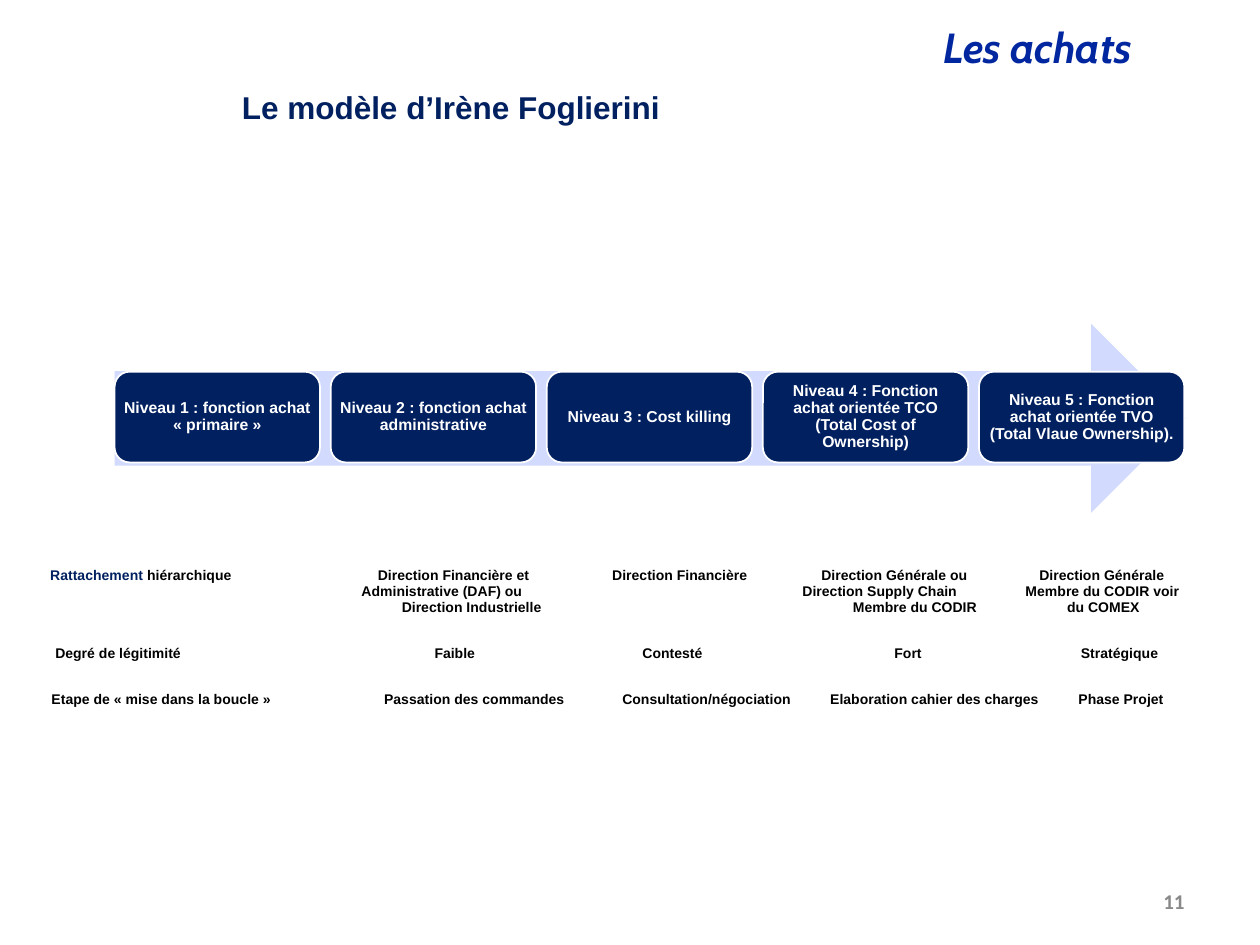
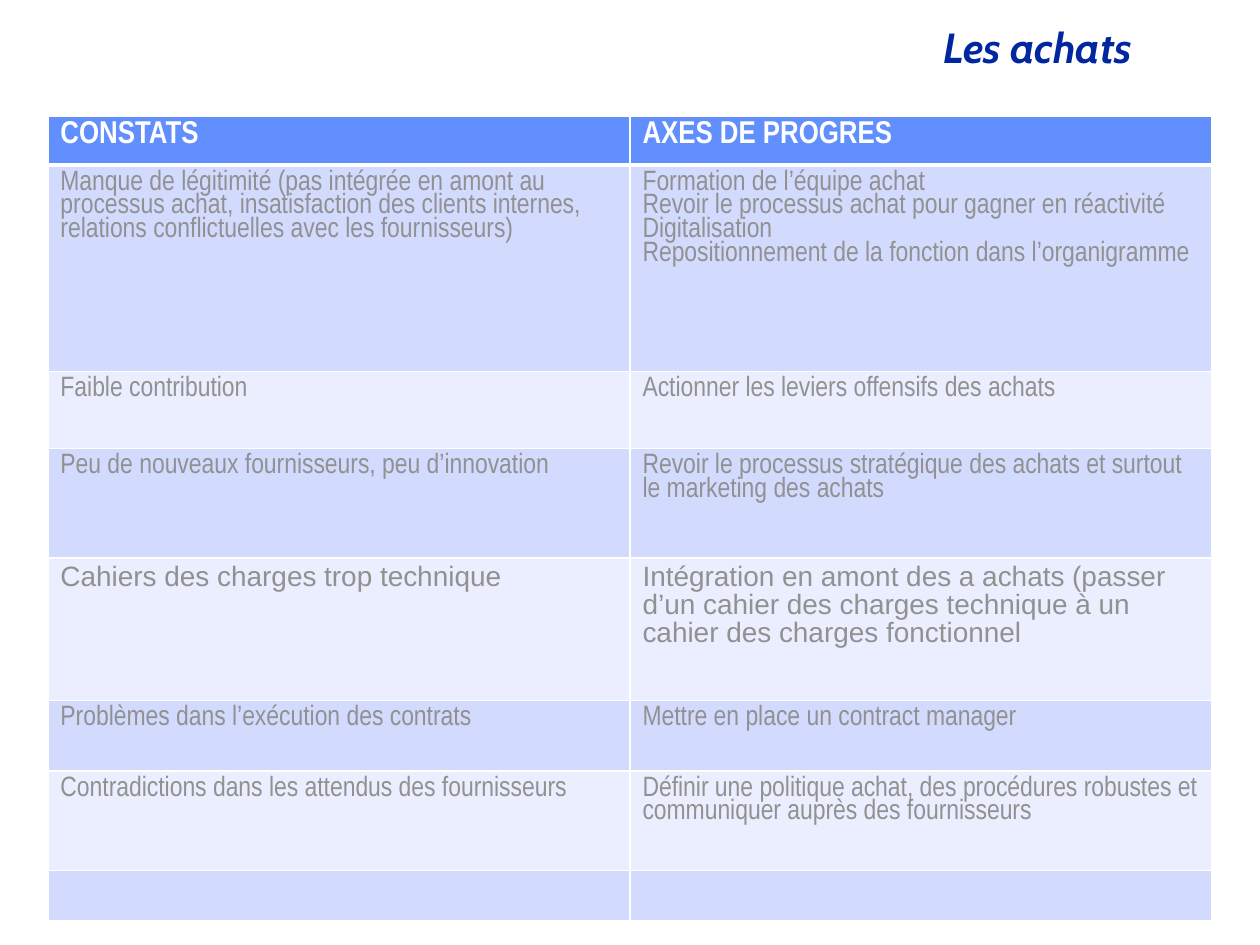
import pptx
import pptx.util
import pptx.dml.color
import pptx.enum.shapes
import pptx.enum.text
import pptx.oxml
import pptx.oxml.ns
from lxml import etree

Inches = pptx.util.Inches
Pt = pptx.util.Pt
ALIGN = pptx.enum.text.PP_ALIGN
ANCHOR = pptx.enum.text.MSO_ANCHOR
SHAPE = pptx.enum.shapes.MSO_SHAPE
qn = pptx.oxml.ns.qn

NAVY = "002060"
BRAND_BLUE = "00279F"
HEADER_BLUE = "618FFD"
PALE_BLUE = "D2DBFE"
PALEST_BLUE = "EAEEFF"
WHITE = "FFFFFF"
BLACK = "000000"
PAGE_GREY = "898989"
TEXT_GREY = "919191"


def colour(hex_value):
    return pptx.dml.color.RGBColor.from_string(hex_value)


def write(frame, lines, font_name, size, hex_value, align, bold=False, spacing=0.9):
    """Fill a text frame with one paragraph per line, all in one style."""
    frame.word_wrap = True
    for index, line in enumerate(lines):
        paragraph = frame.paragraphs[0] if index == 0 else frame.add_paragraph()
        paragraph.text = line
        paragraph.alignment = align
        paragraph.line_spacing = spacing
        paragraph.font.name = font_name
        paragraph.font.size = Pt(size)
        paragraph.font.bold = bold
        paragraph.font.color.rgb = colour(hex_value)


presentation = pptx.Presentation()
presentation.slide_width = Inches(10)
presentation.slide_height = Inches(7.5)
blank_layout = presentation.slide_layouts[6]

# Both slides carry the course title
model_slide = presentation.slides.add_slide(blank_layout)
findings_slide = presentation.slides.add_slide(blank_layout)
for slide in (model_slide, findings_slide):
    course_title = slide.shapes.add_textbox(Inches(1.33), Inches(0.17), Inches(7.75), Inches(0.46))
    write(course_title.text_frame, ["Les achats"], "Cabin", 24, BRAND_BLUE, ALIGN.RIGHT, bold=True)
    course_title.text_frame.paragraphs[0].font.italic = True

# Slide 1: heading and page number
heading = model_slide.shapes.add_textbox(Inches(0.27), Inches(0.68), Inches(6.62), Inches(0.37))
write(heading.text_frame, ["Le modèle d’Irène Foglierini"], "Arial", 18, NAVY, ALIGN.CENTER, bold=True)

page_number = model_slide.shapes.add_textbox(Inches(7.17), Inches(6.95), Inches(2.33), Inches(0.4))
write(page_number.text_frame, ["11"], "Calibri", 12, PAGE_GREY, ALIGN.RIGHT, bold=True, spacing=1.0)
page_number.text_frame.vertical_anchor = ANCHOR.MIDDLE

# Slide 1: arrow with the five levels
arrow = model_slide.shapes.add_shape(
    SHAPE.RIGHT_ARROW, Inches(0.91), Inches(2.57), Inches(8.5), Inches(1.5))
arrow.shadow.inherit = False
arrow.fill.solid()
arrow.fill.fore_color.rgb = colour(PALE_BLUE)
arrow.line.fill.background()

levels = [
    "Niveau 1 : fonction achat «\u00a0primaire\u00a0»",
    "Niveau 2 : fonction achat administrative",
    "Niveau 3 : Cost killing",
    "Niveau 4 : Fonction achat orientée TCO (Total Cost of Ownership)",
    "Niveau 5 : Fonction achat orientée TVO (Total Vlaue Ownership).",
]
level_pitch = (7.77 - 0.91) / 4
for index, level in enumerate(levels):
    box = model_slide.shapes.add_shape(
        SHAPE.ROUNDED_RECTANGLE, Inches(0.91 + index * level_pitch), Inches(2.95),
        Inches(1.63), Inches(0.72))
    box.shadow.inherit = False
    box.fill.solid()
    box.fill.fore_color.rgb = colour(NAVY)
    box.line.color.rgb = colour(WHITE)
    box.line.width = Pt(1)
    frame = box.text_frame
    frame.margin_left = frame.margin_right = Inches(0.04)
    frame.margin_top = frame.margin_bottom = Inches(0.04)
    frame.vertical_anchor = ANCHOR.MIDDLE
    write(frame, [level], "Arial", 9, WHITE, ALIGN.CENTER, bold=True)

# Slide 1: criteria under the levels, each entry on its own tab stop
# (distance from the slide's left edge, entry)
criteria_lines = [
    [(0.4, "Rattachement hiérarchique"), (3.0, "Direction Financière et"),
     (4.86, "Direction Financière"), (6.52, "Direction Générale ou"), (8.25, "Direction Générale")],
    [(2.87, "Administrative (DAF) ou"), (6.37, "Direction Supply Chain"),
     (8.14, "Membre du CODIR voir")],
    [(3.19, "Direction Industrielle"), (6.77, "Membre du CODIR"), (8.47, "du COMEX")],
    [(0.44, "Degré de légitimité"), (3.45, "Faible"), (5.1, "Contesté"),
     (7.1, "Fort"), (8.58, "Stratégique")],
    [(0.41, "Etape de «\u00a0mise dans la boucle\u00a0»"), (3.05, "Passation des commandes"),
     (4.94, "Consultation/négociation"), (6.59, "Elaboration cahier des charges"),
     (8.56, "Phase Projet")],
]
criteria_left = 0.17
criteria = model_slide.shapes.add_textbox(
    Inches(criteria_left), Inches(4.46), Inches(9.45), Inches(1.92))
write(criteria.text_frame, ["".join("\t" + entry for _, entry in line) for line in criteria_lines],
      "Arial", 8, BLACK, ALIGN.LEFT, bold=True, spacing=0.95)
for paragraph, line in zip(criteria.text_frame.paragraphs, criteria_lines):
    tab_list = pptx.oxml.parse_xml(
        '<a:tabLst xmlns:a="http://schemas.openxmlformats.org/drawingml/2006/main"/>')
    for stop, _ in line:
        position = Inches(stop - criteria_left - 0.1)
        etree.SubElement(tab_list, qn("a:tab"), pos=str(position), algn="l")
    paragraph.font.fill  # the default run properties come after the tab list
    paragraph._p.pPr.find(qn("a:defRPr")).addprevious(tab_list)
for paragraph in criteria.text_frame.paragraphs[3:]:
    paragraph.space_before = Pt(17)

# The first word of the criteria is navy
first_paragraph = criteria.text_frame.paragraphs[0]
first_run = first_paragraph.runs[0]
rest = first_run.text.replace("\tRattachement", "", 1)
first_run.text = "\tRattachement"
first_run.font.color.rgb = colour(NAVY)
first_paragraph.add_run().text = rest

# Slide 2: table of findings and areas for progress
findings = [
    (0.39, ["CONSTATS"], ["AXES DE PROGRES"]),
    (1.64, ["Manque de légitimité (pas intégrée en amont au processus achat, insatisfaction "
            "des clients internes, relations conflictuelles avec les fournisseurs)"],
     ["Formation de l’équipe achat",
      "Revoir le processus achat pour gagner en réactivité",
      "Digitalisation",
      "Repositionnement de la fonction dans l’organigramme"]),
    (0.61, ["Faible contribution"], ["Actionner les leviers offensifs des achats"]),
    (0.87, ["Peu de nouveaux fournisseurs, peu d’innovation"],
     ["Revoir le processus stratégique des achats et surtout le marketing des achats"]),
    (1.13, ["Cahiers des charges trop technique"],
     ["Intégration en amont des a achats (passer d’un cahier des charges technique "
      "à un cahier des charges fonctionnel"]),
    (0.56, ["Problèmes dans l’exécution des contrats"], ["Mettre en place un contract manager"]),
    (0.79, ["Contradictions dans les attendus des fournisseurs"],
     ["Définir une politique achat, des procédures robustes et communiquer "
      "auprès des fournisseurs"]),
    (0.39, [], []),
]
specifications_row = 4
table = findings_slide.shapes.add_table(
    len(findings), 2, Inches(0.38), Inches(0.92), Inches(9.25), Inches(6.4)).table
for column in table.columns:
    column.width = Inches(4.62)

for row_index, (height, *cell_texts) in enumerate(findings):
    table.rows[row_index].height = Inches(height)
    is_header = row_index == 0
    row_fill = HEADER_BLUE if is_header else (PALEST_BLUE, PALE_BLUE)[row_index % 2]
    font_name = "Arial" if row_index == specifications_row else "Arial Narrow"
    for column_index, lines in enumerate(cell_texts):
        cell = table.cell(row_index, column_index)
        cell.fill.solid()
        cell.fill.fore_color.rgb = colour(row_fill)
        write(cell.text_frame, lines, font_name, 18 if is_header else 16,
              WHITE if is_header else TEXT_GREY, ALIGN.LEFT, bold=is_header)

        # White borders, thicker under the header
        properties = cell._tc.get_or_add_tcPr()
        for order, side in enumerate(("lnL", "lnR", "lnT", "lnB")):
            under_header = (row_index, side) in ((0, "lnB"), (1, "lnT"))
            border = etree.Element(qn("a:" + side), w=str(Pt(3 if under_header else 1)))
            border_fill = etree.SubElement(border, qn("a:solidFill"))
            etree.SubElement(border_fill, qn("a:srgbClr"), val=WHITE)
            properties.insert(order, border)

presentation.save("out.pptx")
